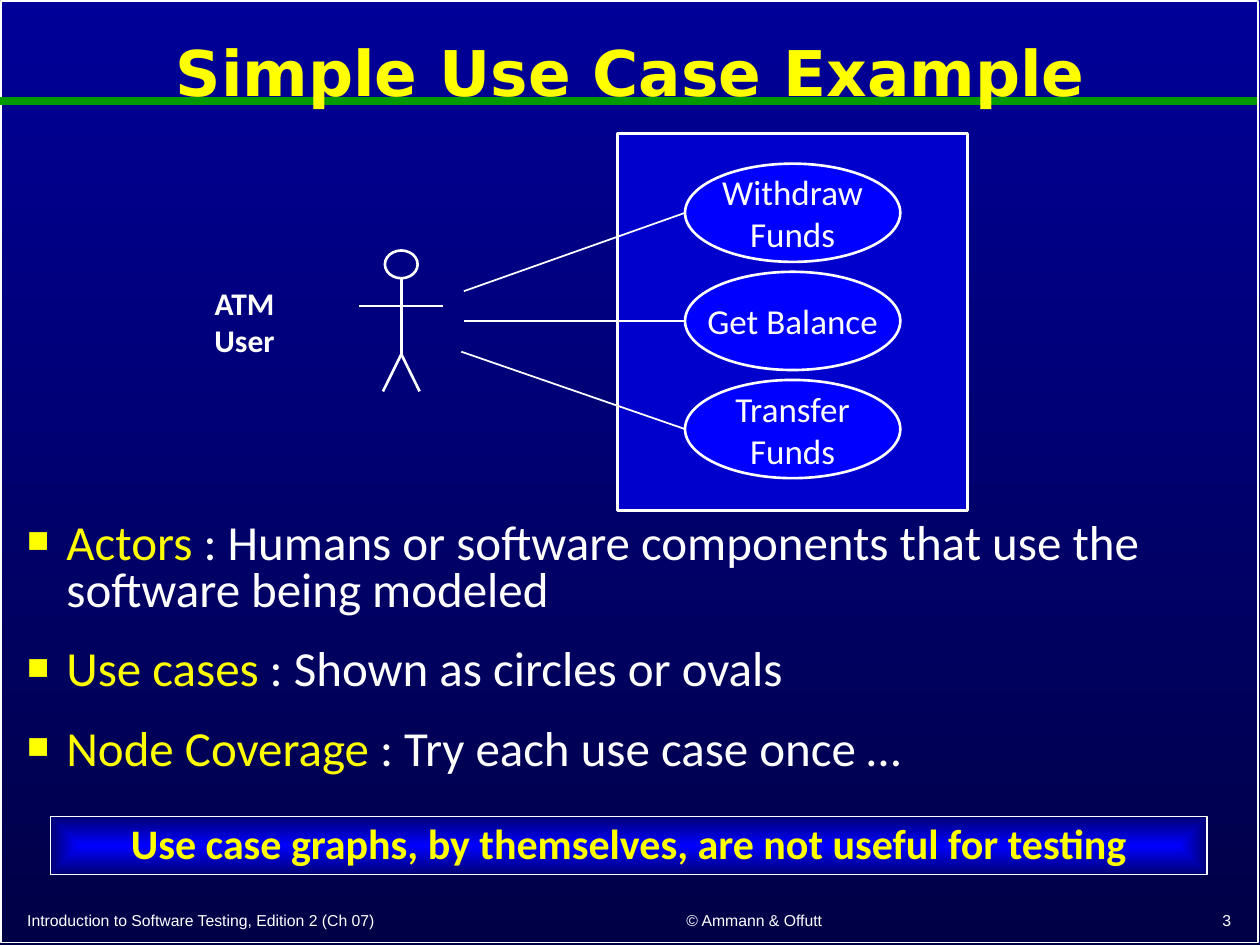
from lxml import etree
from pptx import Presentation
from pptx.dml.color import RGBColor
from pptx.enum.shapes import MSO_CONNECTOR, MSO_SHAPE
from pptx.enum.text import MSO_ANCHOR, PP_ALIGN
from pptx.oxml.ns import qn
from pptx.util import Cm, Pt

WHITE, YELLOW, GREEN = "FFFFFF", "FFFF00", "009900"
BLUE, SYSTEM_BLUE = "0000FF", "0000CC"


def color(value):
    return RGBColor.from_string(value)


def set_gradient(fill, first, last):
    fill.gradient()
    for stop, value in zip(fill.gradient_stops, (first, last)):
        stop.color.rgb = color(value)


def format_span(span, size, value=WHITE, font="Calibri", bold=False):
    span.font.size = Pt(size)
    span.font.name = font
    span.font.bold = bold
    span.font.color.rgb = color(value)


def write(shape, text, size, value=WHITE, font="Calibri", bold=False,
          align=PP_ALIGN.CENTER, spacing=1.0, wrap=True):
    frame = shape.text_frame
    frame.word_wrap = wrap
    frame.vertical_anchor = MSO_ANCHOR.MIDDLE
    frame.text = text
    for para in frame.paragraphs:
        para.alignment = align
        para.line_spacing = spacing
        for span in para.runs:
            format_span(span, size, value, font, bold)


def add_label(slide, left, top, width, height, text, size, **style):
    box = slide.shapes.add_textbox(Cm(left), Cm(top), Cm(width), Cm(height))
    write(box, text, size, **style)


def add_outline(slide, kind, left, top, width, height, fill=None, weight=1.5):
    shape = slide.shapes.add_shape(kind, Cm(left), Cm(top), Cm(width), Cm(height))
    shape.shadow.inherit = False
    shape.line.color.rgb = color(WHITE)
    shape.line.width = Pt(weight)
    if fill:
        shape.fill.solid()
        shape.fill.fore_color.rgb = color(fill)
    else:
        shape.fill.background()
    return shape


def add_line(slide, start, end, weight=1.5, value=WHITE):
    line = slide.shapes.add_connector(
        MSO_CONNECTOR.STRAIGHT, *(Cm(length) for length in (*start, *end)))
    line.line.color.rgb = color(value)
    line.line.width = Pt(weight)
    etree.SubElement(line._element.spPr, qn("a:effectLst"))


def add_bullet(para):
    properties = para._p.get_or_add_pPr()
    properties.set("marL", str(Cm(0.79)))
    properties.set("indent", str(-Cm(0.79)))
    bullet_color = etree.SubElement(properties, qn("a:buClr"))
    etree.SubElement(bullet_color, qn("a:srgbClr"), val=YELLOW)
    etree.SubElement(properties, qn("a:buSzPct"), val="75000")
    etree.SubElement(properties, qn("a:buFont"), typeface="Arial")
    etree.SubElement(properties, qn("a:buChar"), char="■")


def add_definitions(slide, definitions):
    box = slide.shapes.add_textbox(Cm(0.3), Cm(10.41), Cm(24.77), Cm(5.97))
    frame = box.text_frame
    frame.word_wrap = True
    for index, (term, meaning) in enumerate(definitions):
        para = frame.add_paragraph() if index else frame.paragraphs[0]
        para.line_spacing = 0.8
        para.space_before = Pt(6.5)
        para.space_after = Pt(12)
        add_bullet(para)
        for text, value in ((term, YELLOW), (f" : {meaning}", WHITE)):
            span = para.add_run()
            span.text = text
            format_span(span, 28, value)


def add_actor(slide):
    center, hip = 8.09, 7.14
    add_outline(slide, MSO_SHAPE.OVAL, center - 0.33, 5.05, 0.66, 0.56)
    add_line(slide, (center - 0.85, 6.17), (center + 0.85, 6.17))  # arms
    add_line(slide, (center, 5.61), (center, hip))  # body
    for foot in (-0.37, 0.37):
        add_line(slide, (center, hip), (center + foot, 7.89))


def add_use_cases(slide):
    left, top, width, height, pitch = 13.81, 3.3, 4.34, 1.98, 2.18
    actor_ends = ((9.35, 5.87), (9.35, 6.47), (9.3, 7.09))
    names = ("Withdraw\nFunds", "Get Balance", "Transfer\nFunds")
    for index, (name, end) in enumerate(zip(names, actor_ends)):
        oval_top = top + index * pitch
        oval = add_outline(slide, MSO_SHAPE.OVAL, left, oval_top, width, height, BLUE)
        write(oval, name, 20, wrap=False)
        add_line(slide, (left, oval_top + height / 2), end, 1)


def add_conclusion(slide, text):
    banner = add_outline(slide, MSO_SHAPE.RECTANGLE, 1.02, 16.46, 23.32, 1.17, weight=1)
    set_gradient(banner.fill, BLUE, "000075")
    # Let the gradient run from the centre to the edges
    gradient = banner._element.spPr.find(qn("a:gradFill"))
    gradient.remove(gradient.find(qn("a:lin")))
    path = etree.SubElement(gradient, qn("a:path"), {"path": "shape"})
    etree.SubElement(path, qn("a:fillToRect"), dict.fromkeys("ltrb", "50000"))
    write(banner, text, 24, YELLOW, bold=True, spacing=0.9)


def main():
    deck = Presentation()
    deck.slide_width, deck.slide_height = Cm(25.4), Cm(19.05)
    slide = deck.slides.add_slide(deck.slide_layouts[6])

    # Background, frame and rule
    set_gradient(slide.background.fill, "000099", "000046")
    slide.background.fill.gradient_angle = 270
    add_outline(slide, MSO_SHAPE.RECTANGLE, 0.02, 0.02, 25.34, 18.98, weight=1)
    add_line(slide, (0, 2.03), (25.34, 2.03), 4.5, GREEN)

    # Footer
    footers = (
        (0.3, 10.49, "Introduction to Software Testing, Edition 2 (Ch 07)", PP_ALIGN.LEFT),
        (11.18, 8.05, "© Ammann & Offutt", PP_ALIGN.CENTER),
        (19.79, 5.28, "3", PP_ALIGN.RIGHT),
    )
    for left, width, text, align in footers:
        add_label(slide, left, 18.2, width, 0.7, text, 9, font="Arial", align=align)

    # Title
    add_label(slide, 0.3, 0.23, 24.82, 2.62, "Simple Use Case Example", 36,
              value=YELLOW, font="DejaVu Sans", bold=True, spacing=0.9)

    # Use case diagram
    add_outline(slide, MSO_SHAPE.RECTANGLE, 12.45, 2.69, 7.06, 7.6, SYSTEM_BLUE)
    add_actor(slide)
    add_label(slide, 3.94, 5.59, 1.98, 1.78, "ATM\nUser", 18, bold=True, wrap=False)
    add_use_cases(slide)

    # Definitions and conclusion
    add_definitions(slide, (
        ("Actors", "Humans or software components that use the software being modeled"),
        ("Use cases", "Shown as circles or ovals"),
        ("Node Coverage", "Try each use case once …"),
    ))
    add_conclusion(slide, "Use case graphs, by themselves, are not useful for testing")

    deck.save("out.pptx")


if __name__ == "__main__":
    main()
